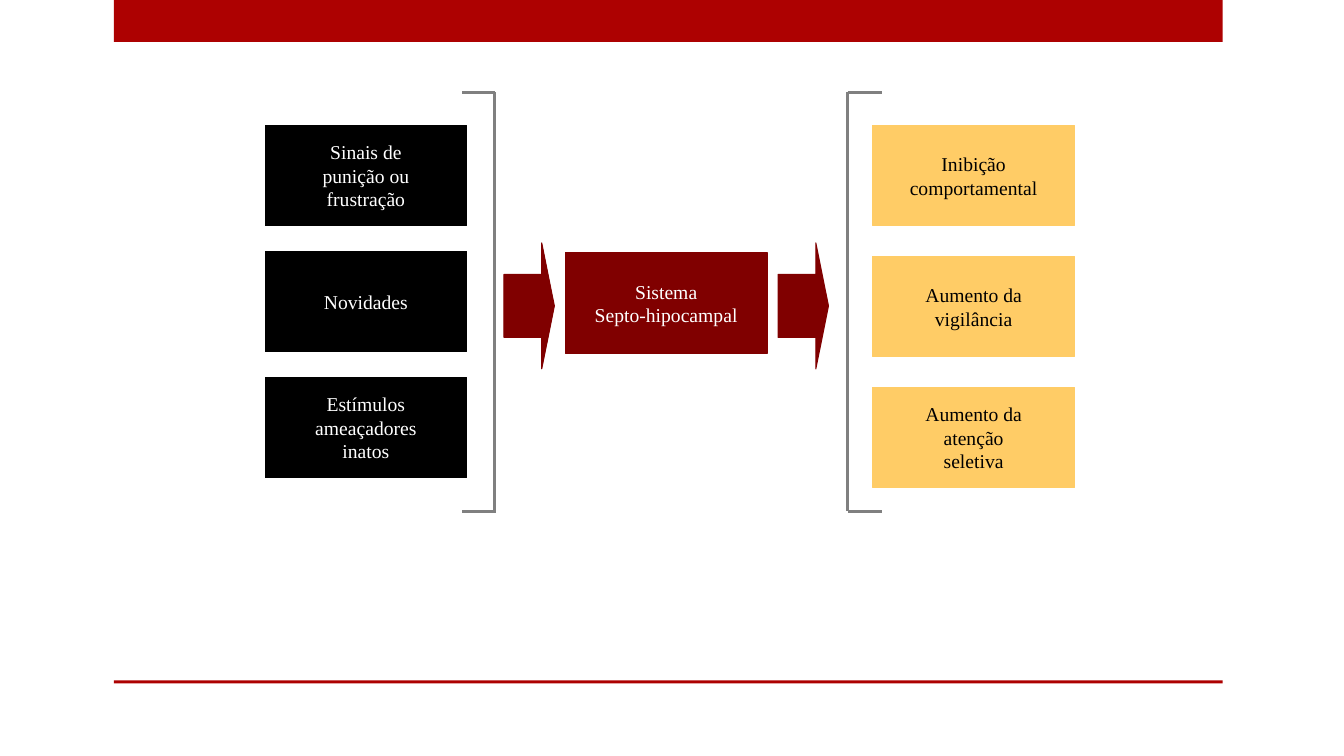
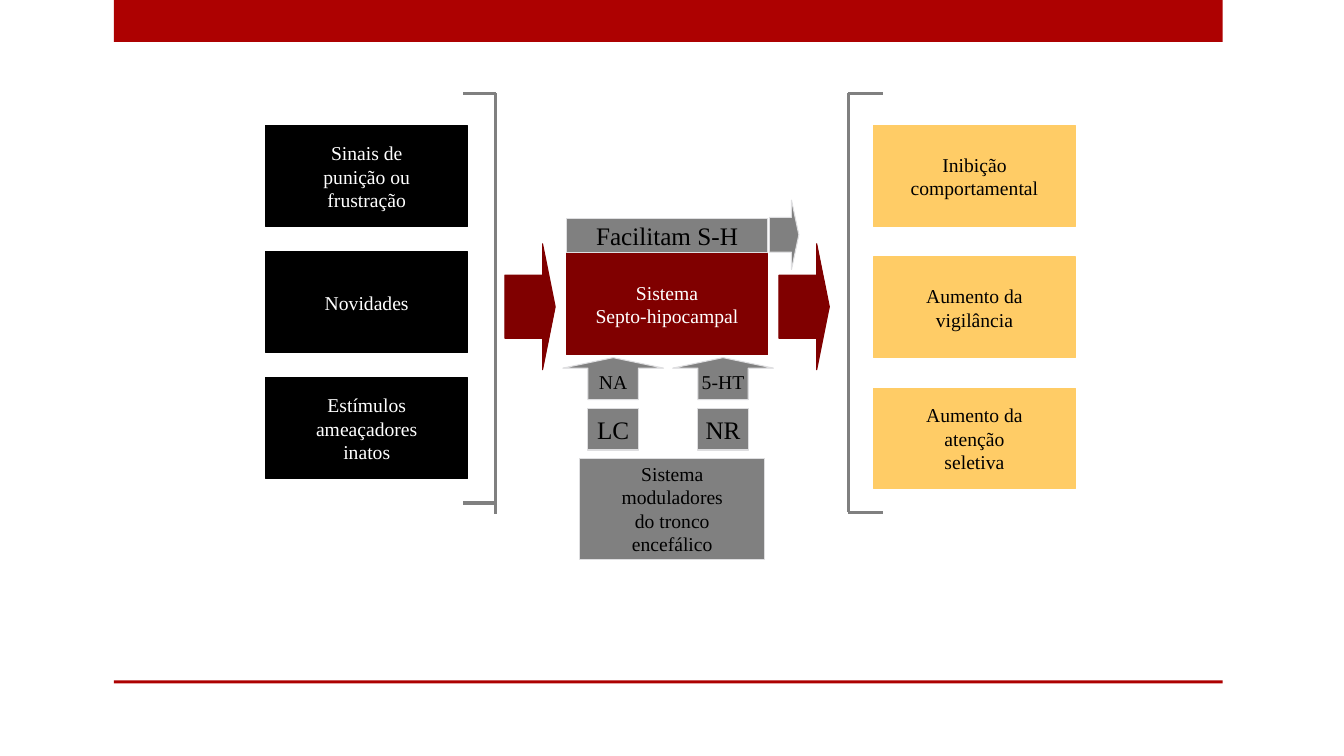
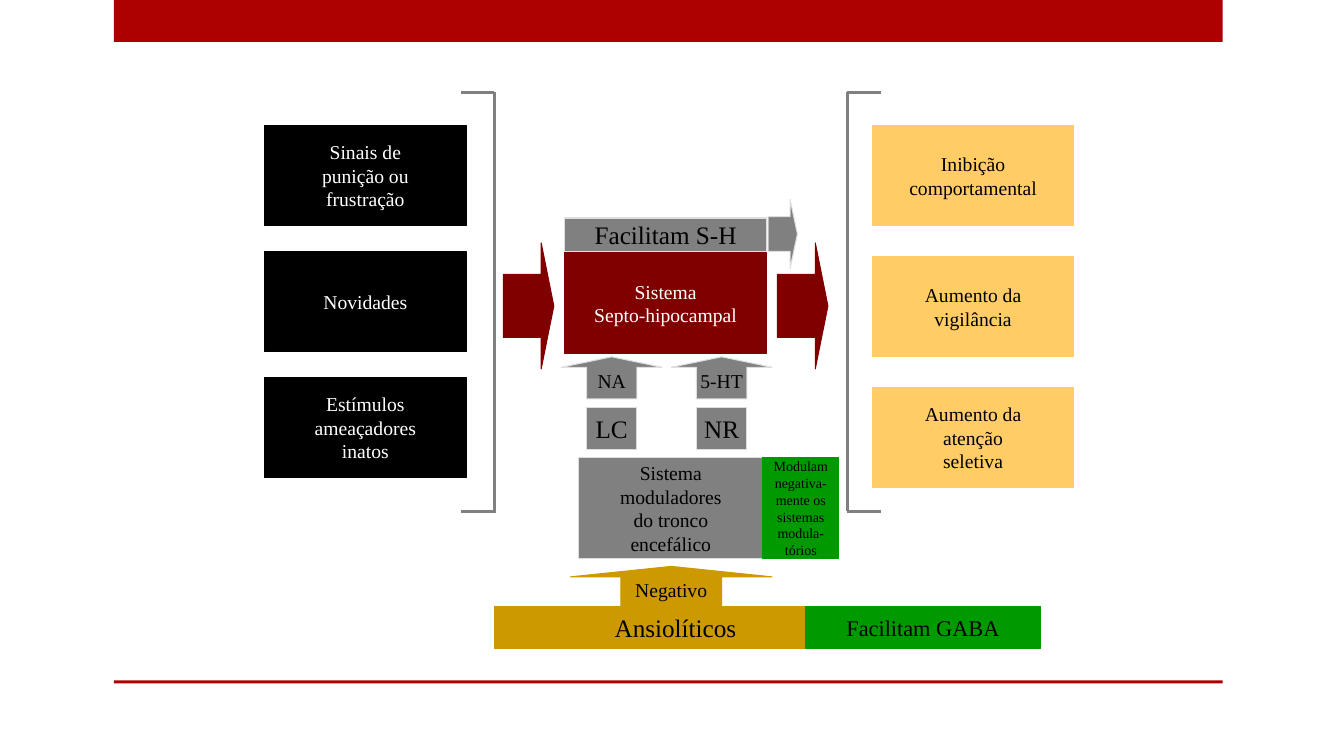
from lxml import etree
from pptx import Presentation
from pptx.dml.color import RGBColor
from pptx.enum.shapes import MSO_CONNECTOR, MSO_SHAPE
from pptx.enum.text import MSO_ANCHOR, PP_ALIGN
from pptx.oxml.ns import qn
from pptx.util import Pt

RECT = MSO_SHAPE.RECTANGLE
RIGHT = MSO_SHAPE.RIGHT_ARROW
UP = MSO_SHAPE.UP_ARROW
LINE = MSO_CONNECTOR.STRAIGHT
MIDDLE = MSO_ANCHOR.MIDDLE
CENTER = PP_ALIGN.CENTER

FONT = "Times New Roman"
BAND, BLACK, WHITE = "AD0101", "000000", "FFFFFF"
WINE, SAND, GREY, PALE = "800000", "FFCC66", "808080", "DEDEE0"
GOLD, GREEN = "CC9900", "009900"

WIDE, HIGH = 144, 72
TOP = 89.4
CORE = 403.9
CAUSES = ["Sinais de\npunição ou\nfrustração", "Novidades",
          "Estímulos\nameaçadores\ninatos"]
EFFECTS = ["Inibição\ncomportamental", "Aumento da\nvigilância",
           "Aumento da\natenção\nseletiva"]
PATHS = [("NA", "LC"), ("5-HT", "NR")]


def paint(target, color):
    target.solid()
    target.fore_color.rgb = RGBColor.from_string(color)


def write(shape, text, size=14, color=BLACK):
    frame = shape.text_frame
    frame.word_wrap = False
    frame.vertical_anchor = MIDDLE
    frame.text = text
    for para in frame.paragraphs:
        para.alignment = CENTER
        for run in para.runs:
            run.font.name = FONT
            run.font.size = Pt(size)
            paint(run.font.fill, color)


def block(shapes, x, y, w, h, fill, kind=RECT, edge=None, text="", **style):
    shape = shapes.add_shape(kind, Pt(x), Pt(y), Pt(w), Pt(h))
    shape.shadow.inherit = False
    paint(shape.fill, fill)
    paint(shape.line.fill, edge or fill)
    shape.line.width = Pt(0.75)
    if kind != RECT:
        shape.adjustments[0] = 0.5
        shape.adjustments[1] = 0.25
    if text:
        write(shape, text, **style)
    return shape


def stroke(shapes, x1, y1, x2, y2):
    line = shapes.add_connector(LINE, Pt(x1), Pt(y1), Pt(x2), Pt(y2))
    paint(line.line.fill, GREY)
    line.line.width = Pt(2.25)
    etree.SubElement(line.element.spPr, qn("a:effectLst"))


def stack(shapes, texts, x, step, fill, color):
    for row, text in enumerate(texts):
        block(shapes, x, TOP + row * step, WIDE, HIGH, fill,
              text=text, color=color)


def bracket(shapes, spine, tip, low, end):
    stroke(shapes, spine, 66, spine, end)
    for y in (66.2, low):
        stroke(shapes, spine, y, tip, y)


def system(shapes, low):
    stack(shapes, CAUSES, 189.4, 90, BLACK, WHITE)
    stack(shapes, EFFECTS, 623.5, 93.6, SAND, BLACK)
    bracket(shapes, 353.5, 330, low, 366.5)
    bracket(shapes, 605.5, 630, 365.2, 365.2)
    for x in (360, 555.8):
        block(shapes, x, 173.5, 36, 90, WINE, RIGHT)
    block(shapes, CORE, 180.7, WIDE, HIGH, WINE,
          text="Sistema\nSepto-hipocampal", color=WHITE)


def stem(shapes):
    for col, (sender, source) in enumerate(PATHS):
        x = 401.4 + col * 78.5
        block(shapes, x, 254.9, 72, 30, GREY, UP, PALE, sender)
        block(shapes, x + 18, 290.9, 36, 30, GREY, edge=PALE,
              text=source, size=18)
    block(shapes, 413.6, 326.9, 132, HIGH, GREY, edge=PALE,
          text="Sistema\nmoduladores\ndo tronco\nencefálico")
    block(shapes, CORE, 155.7, WIDE, 24, GREY, edge=PALE,
          text="Facilitam S-H", size=18)
    block(shapes, 549, 142.4, 21, 49.5, GREY, RIGHT, PALE)


def drugs(shapes):
    block(shapes, 353.9, 433.4, 258, 30, GOLD, text="Ansiolíticos", size=18)
    block(shapes, 407.9, 404.6, 144, 30, GOLD, UP, text="Negativo")
    block(shapes, 575.7, 433.4, 168, 30, GREEN,
          text="Facilitam GABA", size=16)
    block(shapes, 545.4, 326.9, 54, HIGH, GREEN, size=10,
          text="Modulam\nnegativa-\nmente os\nsistemas\nmodula-\ntórios")


def bands(slide):
    for y, h in ((0, 30), (486, 2.2)):
        band = block(slide.shapes, 81.4, y, 792, h, BAND)
        band.line.fill.background()
        slide.slide_layout.shapes.element.append(band.element)


def page(deck, parts, dx=0, dy=0, low=365.2):
    slide = deck.slides.add_slide(deck.slide_layouts[6])
    group = slide.shapes.add_group_shape()
    system(group.shapes, low)
    for part in parts:
        part(group.shapes)
    group.left += Pt(dx)
    group.top += Pt(dy)
    return slide


def main():
    deck = Presentation()
    deck.slide_width, deck.slide_height = Pt(960), Pt(540)
    bands(page(deck, []))
    page(deck, [stem], dx=0.6, dy=0.6, low=358.7)
    page(deck, [stem, drugs], dx=-0.4)
    deck.save("out.pptx")


if __name__ == "__main__":
    main()
